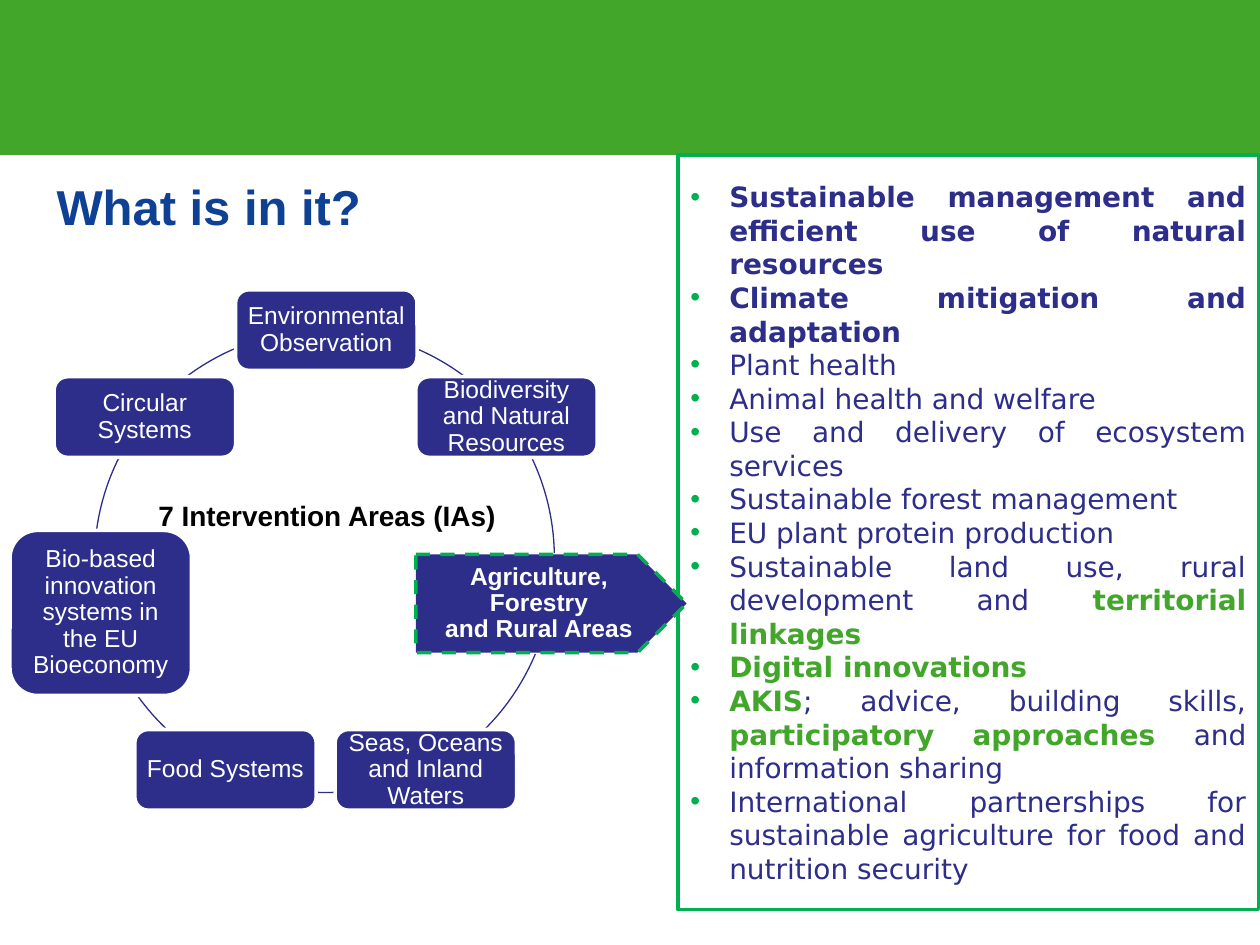
from lxml import etree
from pptx import Presentation
from pptx.dml.color import RGBColor
from pptx.enum.dml import MSO_LINE
from pptx.enum.shapes import MSO_SHAPE
from pptx.enum.text import MSO_ANCHOR, PP_ALIGN
from pptx.oxml.ns import qn
from pptx.util import Inches, Pt

RECT, ROUNDED = MSO_SHAPE.RECTANGLE, MSO_SHAPE.ROUNDED_RECTANGLE
PENTAGON, ARC = MSO_SHAPE.PENTAGON, MSO_SHAPE.ARC
LEFT, CENTER, JUSTIFY = PP_ALIGN.LEFT, PP_ALIGN.CENTER, PP_ALIGN.JUSTIFY
TOP, MIDDLE = MSO_ANCHOR.TOP, MSO_ANCHOR.MIDDLE
DASH = MSO_LINE.DASH

COLORS = {
    "band": "42A62A",
    "title": "0E4194",
    "navy": "2D2D8A",
    "border": "00B050",
    "white": "FFFFFF",
    "black": "000000",
}


def rgb(name):
    return RGBColor.from_string(COLORS[name])


def add_text(paragraph, text, size=14, font="Arial", color="white", bold=False):
    """Append text to a paragraph; a newline becomes a line break."""
    for index, line in enumerate(text.split("\n")):
        if index:
            paragraph.add_line_break()
        run = paragraph.add_run()
        run.text = line
        run.font.size = Pt(size)
        run.font.name = font
        run.font.bold = bold
        run.font.color.rgb = rgb(color)


def add_bullet(paragraph, indent, color):
    properties = paragraph._p.get_or_add_pPr()
    properties.set("marL", str(Inches(indent)))
    properties.set("indent", str(-Inches(indent)))
    bullet_color = etree.SubElement(properties, qn("a:buClr"))
    etree.SubElement(bullet_color, qn("a:srgbClr"), val=COLORS[color])
    etree.SubElement(properties, qn("a:buFont"), typeface="Arial")
    etree.SubElement(properties, qn("a:buChar"), char="•")


class SlideBuilder:
    bullet_font = "DejaVu Sans"
    bullet_indent = 0.31
    node_inset = 0.06
    ring_size = 3.67

    def __init__(self, slide):
        self.slide = slide

    def shape(self, kind, box, fill=None, line=None, width=2, dash=None):
        shape = self.slide.shapes.add_shape(kind, *map(Inches, box))
        shape.shadow.inherit = False
        if fill:
            shape.fill.solid()
            shape.fill.fore_color.rgb = rgb(fill)
        else:
            shape.fill.background()
        if line:
            shape.line.color.rgb = rgb(line)
            shape.line.width = Pt(width)
            if dash:
                shape.line.dash_style = dash
        else:
            shape.line.fill.background()
        return shape

    def label(self, box, text, align=LEFT, anchor=TOP, **style):
        frame = self.slide.shapes.add_textbox(*map(Inches, box)).text_frame
        frame.word_wrap = True
        frame.vertical_anchor = anchor
        frame.paragraphs[0].alignment = align
        add_text(frame.paragraphs[0], text, **style)

    def node(self, box, text, kind=ROUNDED, line="white", dash=None, bold=False):
        frame = self.shape(kind, box, "navy", line, dash=dash).text_frame
        frame.word_wrap = True
        frame.vertical_anchor = MIDDLE
        frame.margin_left = frame.margin_right = Inches(self.node_inset)
        frame.margin_top = frame.margin_bottom = Inches(self.node_inset)
        paragraph = frame.paragraphs[0]
        paragraph.alignment = CENTER
        paragraph.line_spacing = 0.9
        add_text(paragraph, text, bold=bold)

    def ring_arc(self, start, end, left=0.75, top=2.62):
        """Part of the ring, with clockwise angles in degrees from 3 o'clock."""
        box = (left, top, self.ring_size, self.ring_size)
        arc = self.shape(ARC, box, line="navy", width=0.75)
        # Angles are stored in 1/60000 degree, adjustments in 1/100000
        arc.adjustments[0] = start * 0.6
        arc.adjustments[1] = end * 0.6

    def bullet_panel(self, box, items):
        frame = self.shape(RECT, box, "white", "border").text_frame
        frame.word_wrap = True
        frame.vertical_anchor = MIDDLE
        for index, item in enumerate(items):
            paragraph = frame.add_paragraph() if index else frame.paragraphs[0]
            paragraph.alignment = JUSTIFY
            add_bullet(paragraph, self.bullet_indent, "border")
            for text, color, bold in item:
                add_text(paragraph, text, size=16, font=self.bullet_font,
                         color=color, bold=bold)


def plain(text):
    return text, "navy", False


def strong(text):
    return text, "navy", True


def accent(text):
    return text, "band", True


TOPICS = [
    [strong("Sustainable management and efficient use of natural resources")],
    [strong("Climate mitigation and adaptation")],
    [plain("Plant health")],
    [plain("Animal health and welfare")],
    [plain("Use and delivery of ecosystem services")],
    [plain("Sustainable forest management")],
    [plain("EU plant protein production")],
    [plain("Sustainable land use, rural development and "),
     accent("territorial linkages")],
    [accent("Digital innovations")],
    [accent("AKIS"), plain("; advice, building skills, "),
     accent("participatory approaches "), plain("and information sharing")],
    [plain("International partnerships for sustainable agriculture for food "
           "and nutrition security")],
]

# Left, top, height and name of the ordinary intervention areas
NODE_WIDTH = 1.44
AREAS = [
    (1.87, 2.3, 0.64, "Environmental Observation"),
    (3.3, 2.99, 0.64, "Biodiversity and Natural Resources"),
    (2.66, 5.79, 0.64, "Seas, Oceans and Inland Waters"),
    (1.07, 5.79, 0.64, "Food Systems"),
    (0.08, 4.21, 1.31, "Bio-based innovation systems in the EU Bioeconomy"),
    (0.43, 2.99, 0.64, "Circular Systems"),
]

# Visible ring parts between neighbouring areas
RING_ARCS = [
    (293, 306.8),
    (334.8, 358.9, 0.73, 2.59),
    (22.6, 45, 0.72, 2.65),
    (87.7, 92.3),
    (133.7, 144.5),
    (188, 206.4),
    (233.3, 246.7),
]


def main():
    deck = Presentation()
    deck.slide_width, deck.slide_height = Inches(10), Inches(7.5)
    builder = SlideBuilder(deck.slides.add_slide(deck.slide_layouts[6]))

    # Header band and headings
    builder.shape(RECT, (0, 0, 10, 1.23), "band")
    builder.label((0.35, 1.35, 8.91, 0.79), "What is in it?",
                  size=28, color="title", bold=True)
    builder.label((1.14, 3.27, 2.91, 1.64), "7 Intervention Areas (IAs)",
                  CENTER, MIDDLE, size=16, color="black", bold=True)

    # Topics of the highlighted area
    builder.bullet_panel((5.38, 1.23, 4.61, 5.99), TOPICS)

    # Ring of intervention areas
    for arc in RING_ARCS:
        builder.ring_arc(*arc)
    for left, top, height, name in AREAS:
        builder.node((left, top, NODE_WIDTH, height), name)
    builder.node((3.3, 4.4, 2.15, 0.78),
                 "Agriculture, Forestry\nand Rural Areas",
                 PENTAGON, line="border", dash=DASH, bold=True)

    deck.save("out.pptx")


if __name__ == "__main__":
    main()
